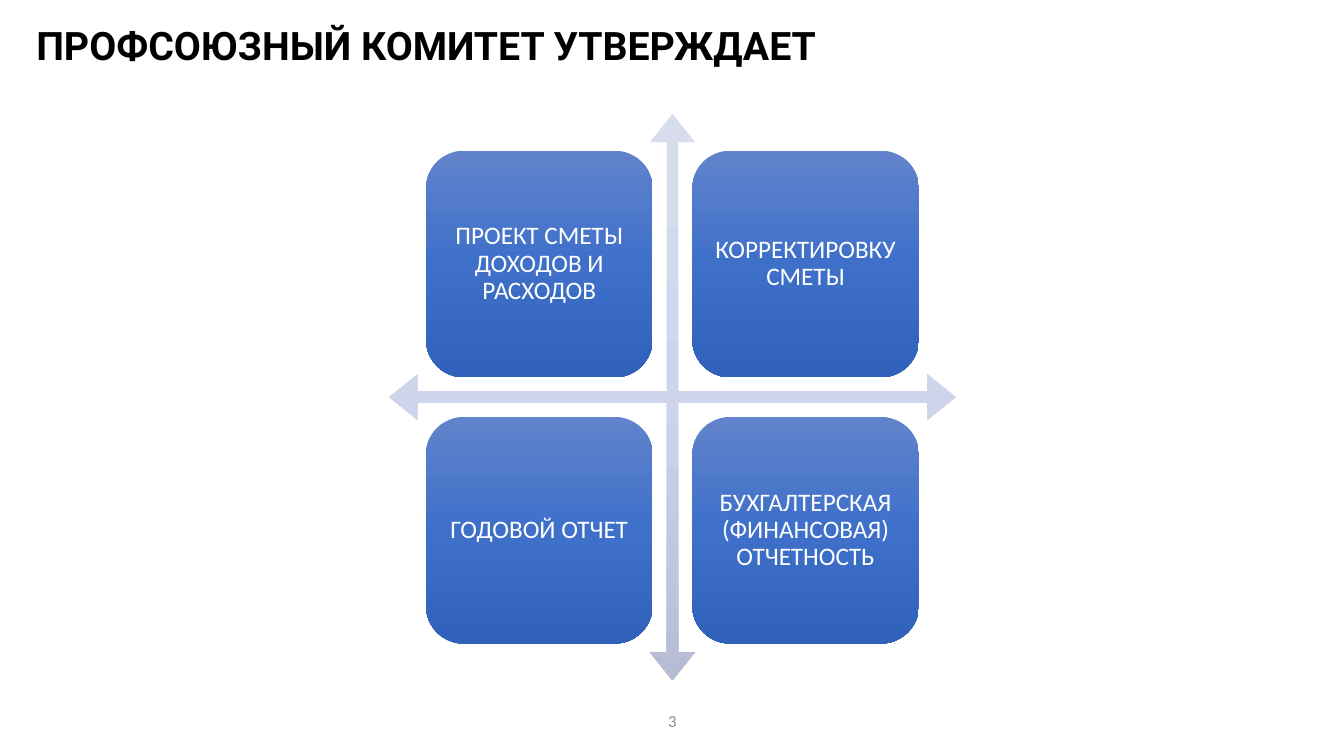
from lxml import etree
from pptx import Presentation
from pptx.dml.color import RGBColor
from pptx.enum.shapes import MSO_SHAPE
from pptx.enum.text import MSO_ANCHOR, MSO_AUTO_SIZE, PP_ALIGN
from pptx.oxml.ns import qn
from pptx.util import Inches, Pt

ROUNDED = MSO_SHAPE.ROUNDED_RECTANGLE
QUAD_ARROW = MSO_SHAPE.QUAD_ARROW
MIDDLE = MSO_ANCHOR.MIDDLE
NO_AUTOFIT = MSO_AUTO_SIZE.NONE
LEFT, CENTER = PP_ALIGN.LEFT, PP_ALIGN.CENTER
TITLE_ONLY = 5

DIAGRAM_LEFT, DIAGRAM_TOP, DIAGRAM_SIDE = 3.86, 1.13, 5.62
TILE_SIDE = 0.4 * DIAGRAM_SIDE
TILE_MARGIN = 0.065 * DIAGRAM_SIDE
TILE_STEP = 0.47 * DIAGRAM_SIDE
ARROW_COLOURS = ("D8DDEE", "CED5EB", "B5BCD3")
TILE_COLOURS = ("6183CB", "3E70CA", "3062BB")
TILE_ROWS = (
    ("ПРОЕКТ СМЕТЫ ДОХОДОВ И РАСХОДОВ", "КОРРЕКТИРОВКУ СМЕТЫ"),
    ("ГОДОВОЙ ОТЧЕТ", "БУХГАЛТЕРСКАЯ (ФИНАНСОВАЯ) ОТЧЕТНОСТЬ"),
)


def colour(value):
    return RGBColor.from_string(value)


def write(box, text, size, font="Calibri", fill="000000", bold=False,
          align=CENTER, spacing=1.0, inset=None):
    frame = box.text_frame
    frame.word_wrap = True
    frame.auto_size = NO_AUTOFIT
    frame.vertical_anchor = MIDDLE
    if inset is not None:
        frame.margin_left = frame.margin_right = Inches(inset)
        frame.margin_top = frame.margin_bottom = Inches(inset)
    para = frame.paragraphs[0]
    para.alignment = align
    para.line_spacing = spacing
    span = para.add_run()
    span.text = text
    span.font.name = font
    span.font.size = Pt(size)
    span.font.bold = bold
    span.font.color.rgb = colour(fill)
    return span


def add_text_shadow(span):
    properties = span.font.fill._xPr
    effects = etree.Element(qn("a:effectLst"))
    shadow = etree.SubElement(effects, qn("a:outerShdw"), blurRad="38100",
                              dist="38100", dir="2700000", algn="tl")
    black = etree.SubElement(shadow, qn("a:srgbClr"), val="000000")
    etree.SubElement(black, qn("a:alpha"), val="43000")
    properties.find(qn("a:solidFill")).addnext(effects)


def fill_downwards(shape, colours):
    gradient = etree.Element(qn("a:gradFill"), rotWithShape="1")
    stops = etree.SubElement(gradient, qn("a:gsLst"))
    for index, value in enumerate(colours):
        stop = etree.SubElement(stops, qn("a:gs"), pos=str(index * 50000))
        etree.SubElement(stop, qn("a:srgbClr"), val=value)
    etree.SubElement(gradient, qn("a:lin"), ang="5400000", scaled="0")
    shape._element.spPr.find(qn("a:prstGeom")).addnext(gradient)


def add_square(page, kind, left, top, side, colours):
    shape = page.shapes.add_shape(kind, Inches(left), Inches(top),
                                  Inches(side), Inches(side))
    shape.shadow.inherit = False
    shape.line.fill.background()
    fill_downwards(shape, colours)
    return shape


def add_title(page, text):
    title = page.shapes.title
    title.left, title.top = Inches(0.26), Inches(0.15)
    title.width, title.height = Inches(8.96), Inches(0.64)
    span = write(title, text, 28, font="Roboto", bold=True, align=LEFT,
                 spacing=0.9)
    add_text_shadow(span)


def add_axes(page):
    arrow = add_square(page, QUAD_ARROW, DIAGRAM_LEFT, DIAGRAM_TOP,
                       DIAGRAM_SIDE, ARROW_COLOURS)
    for index, share in enumerate((0.02, 0.04, 0.05)):
        arrow.adjustments[index] = share


def add_tile(page, column, row, text):
    left = DIAGRAM_LEFT + TILE_MARGIN + column * TILE_STEP
    top = DIAGRAM_TOP + TILE_MARGIN + row * TILE_STEP
    tile = add_square(page, ROUNDED, left, top, TILE_SIDE, TILE_COLOURS)
    write(tile, text, 18, fill="FFFFFF", spacing=0.9, inset=0.07)


def add_page_number(page, number):
    box = page.shapes.add_textbox(Inches(4.42), Inches(6.95),
                                  Inches(4.5), Inches(0.4))
    write(box, number, 12, fill="8C8C8C")


def main():
    deck = Presentation()
    deck.slide_width, deck.slide_height = Inches(13.33), Inches(7.5)
    page = deck.slides.add_slide(deck.slide_layouts[TITLE_ONLY])
    add_title(page, "ПРОФСОЮЗНЫЙ КОМИТЕТ УТВЕРЖДАЕТ")
    add_axes(page)
    for row, texts in enumerate(TILE_ROWS):
        for column, text in enumerate(texts):
            add_tile(page, column, row, text)
    add_page_number(page, "3")
    deck.save("out.pptx")


if __name__ == "__main__":
    main()
